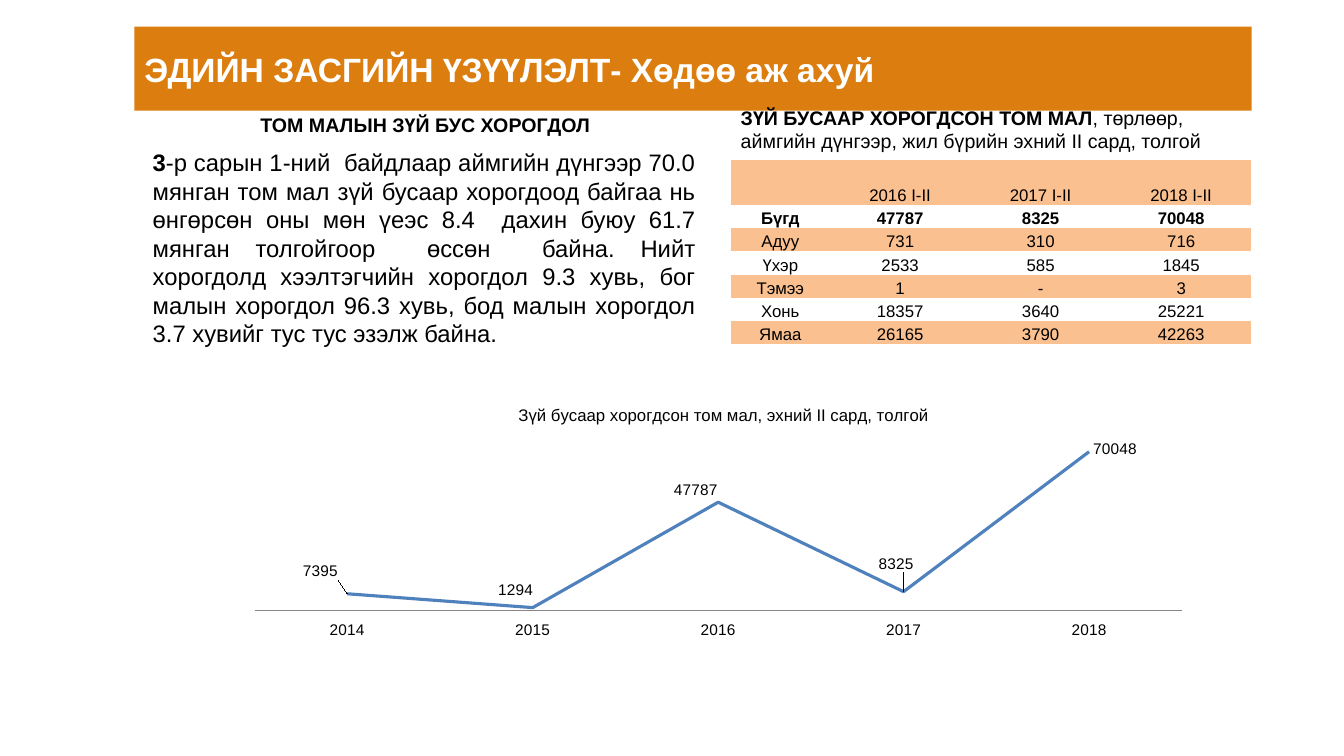
from dataclasses import dataclass

from lxml import etree
from pptx import Presentation
from pptx.chart.data import CategoryChartData
from pptx.dml.color import RGBColor
from pptx.enum.chart import XL_CHART_TYPE, XL_LABEL_POSITION, XL_TICK_LABEL_POSITION, XL_TICK_MARK
from pptx.enum.text import MSO_ANCHOR, MSO_AUTO_SIZE, PP_ALIGN
from pptx.oxml.ns import qn
from pptx.util import Pt

LINE, RIGHT = XL_CHART_TYPE.LINE, XL_LABEL_POSITION.RIGHT
NO_TICK, LOW = XL_TICK_MARK.NONE, XL_TICK_LABEL_POSITION.LOW
LEFT, CENTER, JUSTIFY = PP_ALIGN.LEFT, PP_ALIGN.CENTER, PP_ALIGN.JUSTIFY
TOP, MIDDLE, BOTTOM = MSO_ANCHOR.TOP, MSO_ANCHOR.MIDDLE, MSO_ANCHOR.BOTTOM
NO_FIT = MSO_AUTO_SIZE.NONE
PLAIN_TABLE = "{2D5ABB26-0587-4C30-8999-92F81FD0307C}"
FONT, BLACK, WHITE = "Arial", "000000", "FFFFFF"
ORANGE, PEACH, BLUE, GREY = "DC7D0F", "FAC090", "4F81BD", "878787"


@dataclass
class Box:
    x: float
    y: float
    w: float
    h: float

    def emu(self) -> tuple:
        return Pt(self.x), Pt(self.y), Pt(self.w), Pt(self.h)


@dataclass
class Run:
    text: str
    bold: bool = False


@dataclass
class YearLoss:
    year: str
    head: int
    dx: float
    dy: float


LIVESTOCK = [
    ("", "2016 I-II", "2017 I-II", "2018 I-II"),
    ("Бүгд", "47787", "8325", "70048"),
    ("Адуу", "731", "310", "716"),
    ("Үхэр", "2533", "585", "1845"),
    ("Тэмээ", "1", "-", "3"),
    ("Хонь", "18357", "3640", "25221"),
    ("Ямаа", "26165", "3790", "42263"),
]
LOSSES = [
    YearLoss("2014", 7395, -0.05, -0.09),
    YearLoss("2015", 1294, -0.04, -0.07),
    YearLoss("2016", 47787, -0.05, -0.05),
    YearLoss("2017", 8325, -0.03, -0.11),
    YearLoss("2018", 70048, 0, -0.01),
]
SUMMARY = [
    Run("3", True),
    Run("-р сарын 1-ний  байдлаар аймгийн дүнгээр 70.0 мянган том мал зүй бусаар "
        "хорогдоод байгаа нь өнгөрсөн оны мөн үеэс 8.4  дахин буюу 61.7 мянган "
        "толгойгоор  өссөн  байна. Нийт хорогдолд хээлтэгчийн хорогдол 9.3 хувь, "
        "бог малын хорогдол 96.3 хувь, бод малын хорогдол 3.7 хувийг тус тус "
        "эзэлж байна."),
]
TABLE_CAPTION = [
    Run("ЗҮЙ БУСААР ХОРОГДСОН ТОМ МАЛ", True),
    Run(", төрлөөр, аймгийн дүнгээр, жил бүрийн эхний II сард, толгой"),
]


def rgb(value: str) -> RGBColor:
    return RGBColor.from_string(value)


def style_font(font, size: float, color: str = BLACK, bold: bool = False) -> None:
    font.name, font.size, font.bold = FONT, Pt(size), bold
    font.color.rgb = rgb(color)


def write(tf, runs: list[Run], size: float, color: str = BLACK, align=LEFT) -> None:
    p = tf.paragraphs[0]
    p.alignment = align
    style_font(p.font, size, color)
    for run in runs:
        r = p.add_run()
        r.text = run.text
        style_font(r.font, size, color, run.bold)


def add_title(s, box: Box, text: str) -> None:
    sp = s.shapes.title
    sp.left, sp.top, sp.width, sp.height = box.emu()
    sp.fill.solid()
    sp.fill.fore_color.rgb = rgb(ORANGE)
    tf = sp.text_frame
    tf.auto_size, tf.vertical_anchor = NO_FIT, MIDDLE
    write(tf, [Run(text, True)], 24, WHITE, JUSTIFY)


def add_text(s, box: Box, runs: list[Run], size: float, align=LEFT) -> None:
    tf = s.shapes.add_textbox(*box.emu()).text_frame
    tf.word_wrap, tf.vertical_anchor = True, TOP
    write(tf, runs, size, align=align)


def add_plain_table(s, box: Box, rows: int, cols: int):
    frame = s.shapes.add_table(rows, cols, *box.emu())
    table = frame.table
    table.first_row = table.horz_banding = False
    frame._element.find(".//" + qn("a:tableStyleId")).text = PLAIN_TABLE
    return table


def fill_cell(cell, run: Run, size: float, align, anchor, margin: float, fill: str = "") -> None:
    cell.margin_left = cell.margin_right = cell.margin_top = Pt(margin)
    cell.margin_bottom = Pt(0)
    cell.vertical_anchor = anchor
    if fill:
        cell.fill.solid()
        cell.fill.fore_color.rgb = rgb(fill)
    else:
        cell.fill.background()
    write(cell.text_frame, [run] if run.text else [], size, align=align)


def add_livestock_table(s, box: Box) -> None:
    table = add_plain_table(s, box, len(LIVESTOCK), len(LIVESTOCK[0]))
    for col, width in zip(table.columns, (70.8, 100.4, 100.4, 100.4)):
        col.width = Pt(width)
    for i, values in enumerate(LIVESTOCK):
        table.rows[i].height = Pt(16.6 if i else 32.4)
        for j, value in enumerate(values):
            fill_cell(table.cell(i, j), Run(value, i == 1), 12, CENTER, BOTTOM, 0.7,
                      "" if i % 2 else PEACH)


def set_layout(parent, index: int, **fields) -> None:
    for old in parent.findall(qn("c:layout")):
        parent.remove(old)
    layout = etree.Element(qn("c:layout"))
    manual = etree.SubElement(layout, qn("c:manualLayout"))
    for name, value in fields.items():
        etree.SubElement(manual, qn("c:" + name)).set("val", str(value))
    parent.insert(index, layout)


def add_loss_chart(s, box: Box, title: str) -> None:
    data = CategoryChartData()
    data.categories = [loss.year for loss in LOSSES]
    data.add_series("Series 1", [loss.head for loss in LOSSES])
    chart = s.shapes.add_chart(LINE, *box.emu(), data).chart
    style_font(chart.font, 10)
    chart.has_legend = False
    write(chart.chart_title.text_frame, [Run(title)], 12, align=CENTER)
    set_layout(chart.chart_title._element, 1, xMode="edge", yMode="edge", x=0.29, y=0.06)
    set_layout(chart._chartSpace.chart.plotArea, 0, layoutTarget="inner", xMode="edge",
               yMode="edge", x=0.02, y=0.17, w=0.96, h=0.72)

    years, heads = chart.category_axis, chart.value_axis
    years.major_tick_mark = years.minor_tick_mark = NO_TICK
    years.tick_label_position = LOW
    years.format.line.color.rgb = rgb(GREY)
    style_font(years.tick_labels.font, 11)
    heads.minimum_scale, heads.maximum_scale = 0, 80000
    heads.has_major_gridlines = heads.visible = False

    chart.plots[0].vary_by_categories = False
    series = chart.plots[0].series[0]
    series.smooth = False
    series.format.line.width = Pt(2.25)
    series.format.line.color.rgb = rgb(BLUE)
    for i in range(len(LOSSES)):
        label = series.points[i].data_label
        style_font(label.font, 11)
        label.position = RIGHT
    for loss, element in zip(LOSSES, series._element.iter(qn("c:dLbl"))):
        set_layout(element, 1, x=loss.dx, y=loss.dy)


def main() -> None:
    """Build the livestock loss slide."""
    prs = Presentation()
    prs.slide_width, prs.slide_height = Pt(960), Pt(540)
    s = prs.slides.add_slide(prs.slide_layouts[5])
    add_title(s, Box(96, 19, 798, 60), "ЭДИЙН ЗАСГИЙН ҮЗҮҮЛЭЛТ- Хөдөө аж ахуй")
    add_text(s, Box(102, 102, 402, 171), SUMMARY, 17, JUSTIFY)
    heading = add_plain_table(s, Box(186, 78, 246, 24), 1, 1)
    fill_cell(heading.cell(0, 0), Run("ТОМ МАЛЫН ЗҮЙ БУС ХОРОГДОЛ", True), 14, LEFT, MIDDLE, 0)
    add_text(s, Box(522, 72, 378, 41), TABLE_CAPTION, 14)
    add_livestock_table(s, Box(522, 114, 372, 132))
    add_loss_chart(s, Box(168, 276, 690, 180),
                   "Зүй бусаар хорогдсон том мал, эхний II сард, толгой")
    prs.save("out.pptx")


if __name__ == "__main__":
    main()
